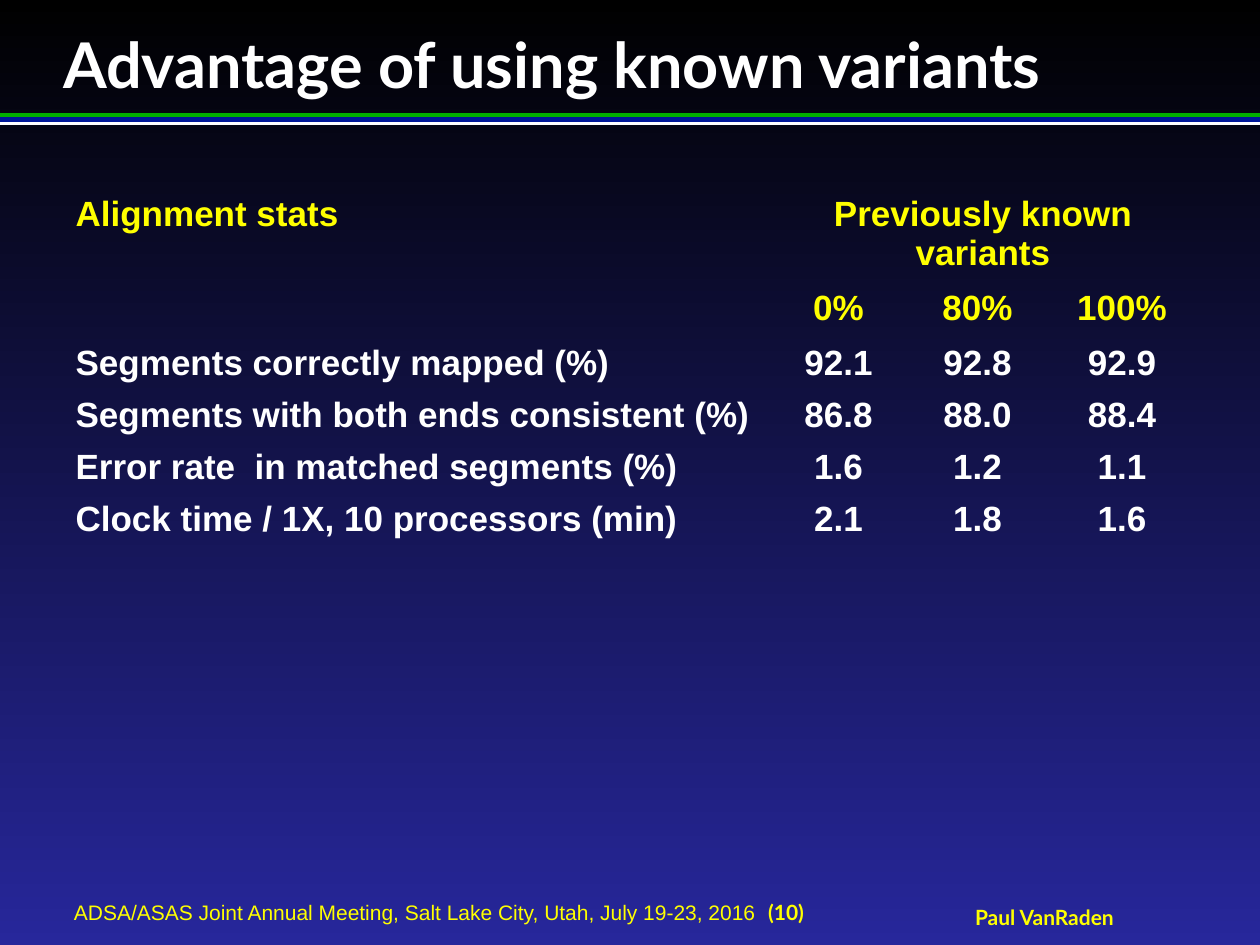
from pptx import Presentation
from pptx.dml.color import RGBColor
from pptx.enum.shapes import MSO_SHAPE
from pptx.enum.text import MSO_ANCHOR, PP_ALIGN
from pptx.util import Pt

PX = 914400 / 126
COLORS = {"top": "000000", "bottom": "27279B", "green": "01AF00",
          "blue": "001799", "white": "FFFFFF", "yellow": "FFFF00"}


def px(*values):
    return [round(v * PX) for v in values]


def style(font, name, size, color, bold=True):
    font.name, font.size, font.bold = name, Pt(size), bold
    font.color.rgb = RGBColor.from_string(COLORS[color])


prs = Presentation()
prs.slide_width, prs.slide_height = px(1260, 945)
s = prs.slides.add_slide(prs.slide_layouts[5])

# Background gradient, running downwards
fill = s.background.fill
fill.gradient()
fill.gradient_angle = 270
for stop, position, color in zip(fill.gradient_stops, (0, 1), ("top", "bottom")):
    stop.position = position
    stop.color.rgb = RGBColor.from_string(COLORS[color])

# Rules under the title
for y, height, color in [(113, 4, "green"), (121, 4, "white"), (117, 5, "blue")]:
    sp = s.shapes.add_shape(MSO_SHAPE.RECTANGLE, *px(0, y, 1260, height))
    sp.shadow.inherit = False
    sp.fill.solid()
    sp.fill.fore_color.rgb = RGBColor.from_string(COLORS[color])
    sp.line.fill.background()

# Title
title = s.shapes.title
title.left, title.top, title.width, title.height = px(63, 25, 1134, 76)
tf = title.text_frame
tf.margin_left = tf.margin_top = tf.margin_right = tf.margin_bottom = 0
tf.vertical_anchor = MSO_ANCHOR.TOP
tf.text = "Advantage of using known variants"
p = tf.paragraphs[0]
p.alignment = PP_ALIGN.LEFT
style(p.runs[0].font, "Lato", 36, "white")

# Footer: meeting with page number, and speaker
meeting = "ADSA/ASAS Joint Annual Meeting, Salt Lake City, Utah, July 19-23, 2016  "
footers = [
    ((74, 900, 857, 25), PP_ALIGN.LEFT, True,
     [(meeting, "Arial", False), ("(10)", "Lato", True)]),
    ((969, 905, 151, 25), PP_ALIGN.CENTER, False, [("Paul VanRaden", "Lato", True)]),
]
for box, align, wrap, runs in footers:
    tf = s.shapes.add_textbox(*px(*box)).text_frame
    tf.margin_left = tf.margin_top = tf.margin_right = tf.margin_bottom = 0
    tf.vertical_anchor = MSO_ANCHOR.MIDDLE
    tf.word_wrap = wrap
    p = tf.paragraphs[0]
    p.alignment = align
    for text, font, bold in runs:
        r = p.add_run()
        r.text = text
        style(r.font, font, 12, "yellow", bold)

# Alignment statistics table
rows = [
    ["Alignment stats", "Previously known variants", "", ""],
    ["", "0%", "80%", "100%"],
    ["Segments correctly mapped (%)", "92.1", "92.8", "92.9"],
    ["Segments with both ends consistent (%)", "86.8", "88.0", "88.4"],
    ["Error rate  in matched segments (%)", "1.6", "1.2", "1.1"],
    ["Clock time / 1X, 10 processors (min)", "2.1", "1.8", "1.6"],
]
widths = [706, 139, 139, 150]
heights = [91, 55] + [52] * 4
table = s.shapes.add_table(len(rows), len(widths),
                           *px(63, 189, sum(widths), sum(heights))).table
table.first_row = table.horz_banding = False
for column, width in zip(table.columns, px(*widths)):
    column.width = width
for row, height in zip(table.rows, px(*heights)):
    row.height = height
table.cell(0, 1).merge(table.cell(0, 3))

for i, row in enumerate(rows):
    for j, text in enumerate(row):
        cell = table.cell(i, j)
        cell.fill.background()
        cell.margin_top, cell.margin_bottom = px(6, 4)
        cell.text_frame.text = text
        p = cell.text_frame.paragraphs[0]
        p.alignment = PP_ALIGN.CENTER if j else PP_ALIGN.LEFT
        # An empty cell still needs its size, or its row grows
        font = p.runs[0].font if p.runs else p.font
        style(font, "Arial", 20, "yellow" if i < 2 else "white")

# Table style without grid lines
style_id = table._tbl.tblPr.find(
    "{http://schemas.openxmlformats.org/drawingml/2006/main}tableStyleId")
style_id.text = "{2D5ABB26-0587-4C30-8999-92F81FD0307C}"

prs.save("out.pptx")
